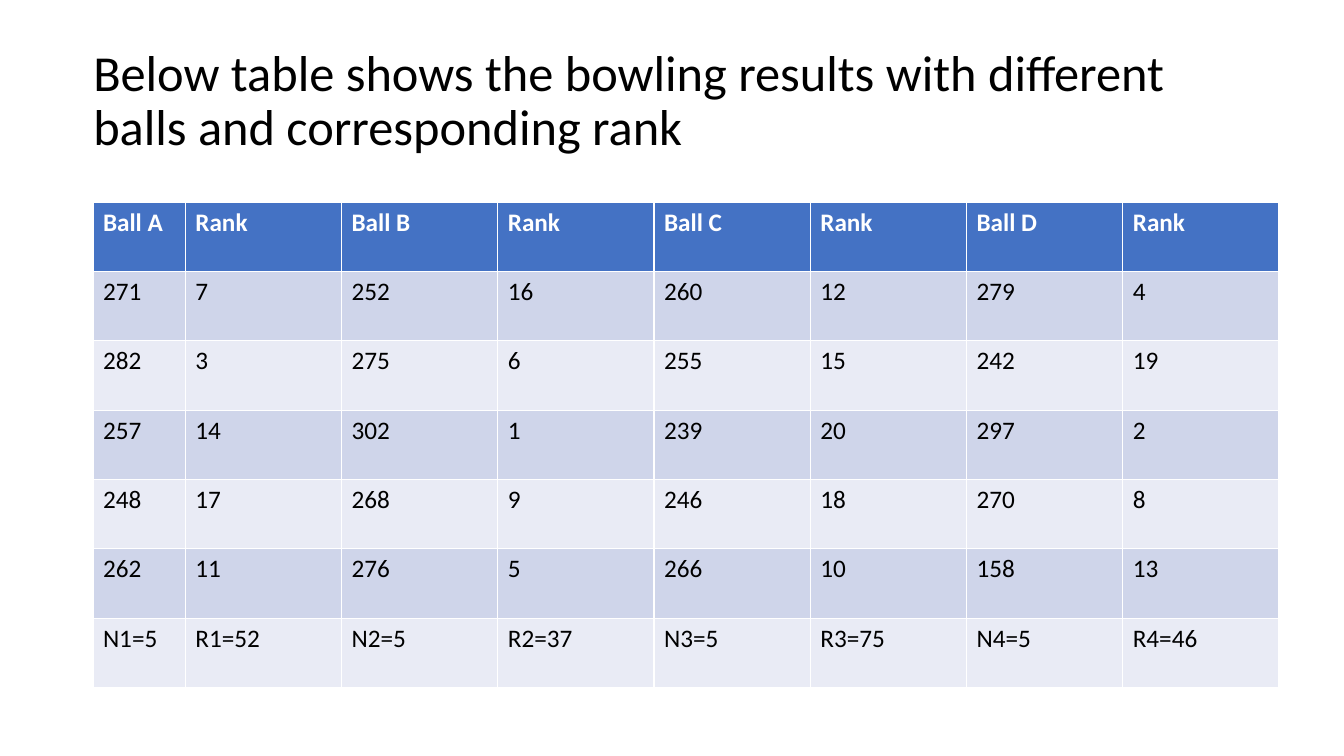
"""Build a slide with a table of bowling results and ranks for four balls."""
from pptx import Presentation
from pptx.dml.color import RGBColor
from pptx.enum.text import MSO_ANCHOR, MSO_AUTO_SIZE, PP_ALIGN
from pptx.util import Pt

LEFT = PP_ALIGN.LEFT
MIDDLE = MSO_ANCHOR.MIDDLE
NO_AUTOFIT = MSO_AUTO_SIZE.NONE

BLACK = RGBColor(0x00, 0x00, 0x00)
WHITE = RGBColor(0xFF, 0xFF, 0xFF)
HEADER_BLUE = RGBColor(0x44, 0x72, 0xC4)
DARK_BAND = RGBColor(0xCF, 0xD5, 0xEA)
LIGHT_BAND = RGBColor(0xE9, 0xEB, 0xF5)

FONT = "Calibri"
FIRST_COLUMN_WIDTH = 66
COLUMN_WIDTH = 111.6
ROW_HEIGHT = 49.55

RESULTS = [
    ["Ball A", "Rank", "Ball B", "Rank", "Ball C", "Rank", "Ball D", "Rank"],
    ["271", "7", "252", "16", "260", "12", "279", "4"],
    ["282", "3", "275", "6", "255", "15", "242", "19"],
    ["257", "14", "302", "1", "239", "20", "297", "2"],
    ["248", "17", "268", "9", "246", "18", "270", "8"],
    ["262", "11", "276", "5", "266", "10", "158", "13"],
    ["N1=5", "R1=52", "N2=5", "R2=37", "N3=5", "R3=75", "N4=5", "R4=46"],
]


def format_paragraph(paragraph, size, color, bold=False):
    paragraph.alignment = LEFT
    paragraph.font.name = FONT
    paragraph.font.size = Pt(size)
    paragraph.font.bold = bold
    paragraph.font.color.rgb = color


presentation = Presentation()
presentation.slide_width = Pt(960)
presentation.slide_height = Pt(540)
slide = presentation.slides.add_slide(presentation.slide_layouts[5])

title = slide.shapes.title
title.left, title.top, title.width, title.height = Pt(59.4), Pt(20.9), Pt(828), Pt(104.4)
title_frame = title.text_frame
title_frame.text = "Below table shows the bowling results with different balls and corresponding rank"
title_frame.word_wrap = True
title_frame.auto_size = NO_AUTOFIT
title_frame.vertical_anchor = MIDDLE
title_paragraph = title_frame.paragraphs[0]
title_paragraph.line_spacing = 0.9
format_paragraph(title_paragraph, 36, BLACK)

row_count, column_count = len(RESULTS), len(RESULTS[0])
table_width = FIRST_COLUMN_WIDTH + COLUMN_WIDTH * (column_count - 1)
table = slide.shapes.add_table(
    row_count, column_count, Pt(66.4), Pt(144.3), Pt(table_width), Pt(ROW_HEIGHT * row_count)
).table

for column in table.columns:
    column.width = Pt(COLUMN_WIDTH)
table.columns[0].width = Pt(FIRST_COLUMN_WIDTH)

for row_index, values in enumerate(RESULTS):
    table.rows[row_index].height = Pt(ROW_HEIGHT)
    is_header = row_index == 0
    band = DARK_BAND if row_index % 2 else LIGHT_BAND
    for column_index, value in enumerate(values):
        cell = table.cell(row_index, column_index)
        cell.text = value
        cell.fill.solid()
        cell.fill.fore_color.rgb = HEADER_BLUE if is_header else band
        format_paragraph(
            cell.text_frame.paragraphs[0], 18, WHITE if is_header else BLACK, is_header
        )

presentation.save("out.pptx")
